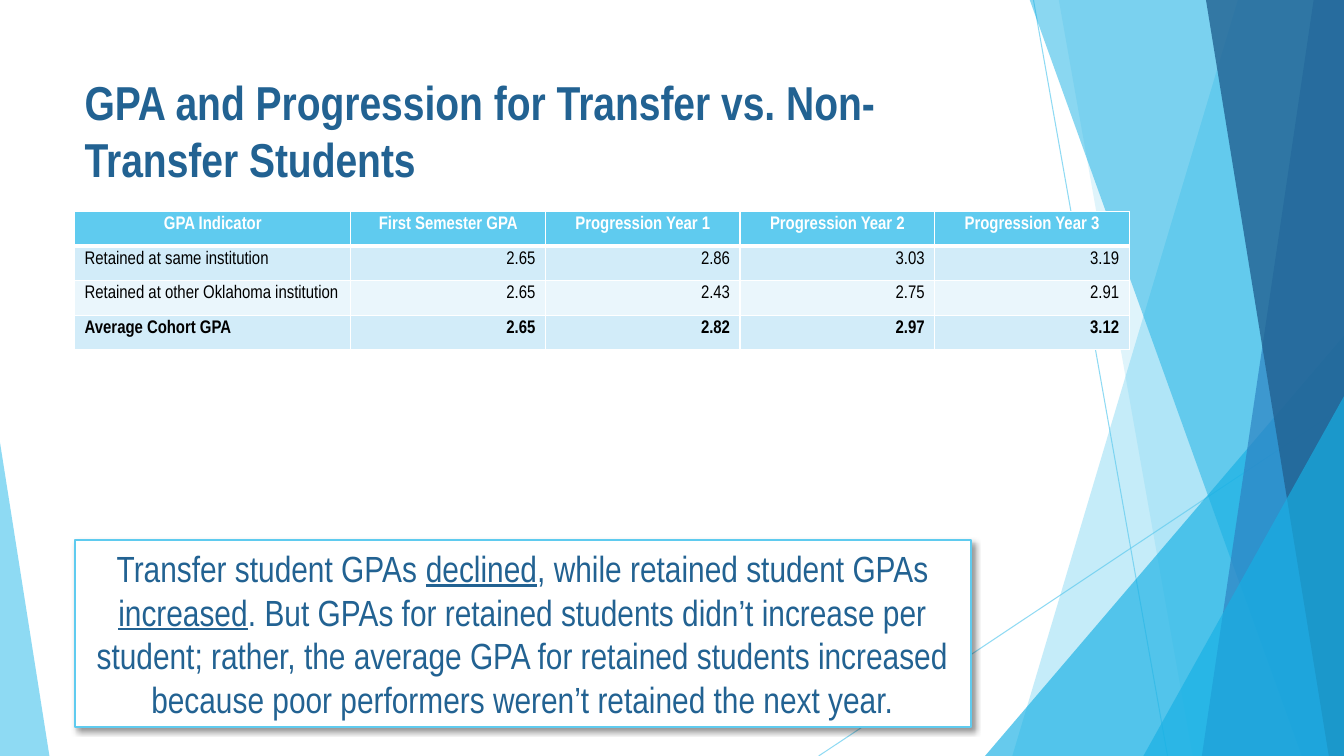
from lxml.etree import SubElement
from pptx import Presentation
from pptx.dml.color import RGBColor
from pptx.enum.shapes import MSO_CONNECTOR, MSO_SHAPE
from pptx.enum.text import MSO_ANCHOR, PP_ALIGN
from pptx.oxml.ns import qn
from pptx.util import Inches, Pt

FONT = "Arial Narrow"
WHITE, BLACK = "FFFFFF", "000000"
SKY, CYAN, BLUE, NAVY = "5FCBEF", "17B0E4", "2E83C3", "226292"
BAND_DARK, BAND_LIGHT = "D2ECF9", "EAF6FC"

WIDTH, HEIGHT, FACET_TOP = 13.33, 7.5, -0.01

TITLE = "GPA and Progression for Transfer vs. Non-Transfer Students"

GPA_ROWS = [
    ("GPA Indicator", "First Semester GPA", "Progression Year 1",
     "Progression Year 2", "Progression Year 3"),
    ("Retained at same institution", "2.65", "2.86", "3.03", "3.19"),
    ("Retained at other Oklahoma institution", "2.65", "2.43", "2.75", "2.91"),
    ("Average Cohort GPA", "2.65", "2.82", "2.97", "3.12"),
]
COLUMN_WIDTHS = [2.74] + [1.93] * 4
TABLE_HEIGHT = 1.37

# (text, underlined)
FINDING = [
    ("Transfer student GPAs ", False),
    ("declined", True),
    (", while retained student GPAs ", False),
    ("increased", True),
    (". But GPAs for retained students didn’t increase per student; rather, "
     "the average GPA for retained students increased because poor performers "
     "weren’t retained the next year.", False),
]

# (start x, start y, end x, end y)
RAYS = [(10.25, 0, 11.58, HEIGHT), (WIDTH, 4.03, 8.12, HEIGHT)]

# Bands reach the right edge: ("band", top x, bottom x, colour, opacity)
# Triangles stand on the bottom edge: ("triangle", left, top, width, apex, colour, opacity)
FACETS = [
    ("band", 12.28, 10.04, SKY, 36),
    ("band", 10.5, 11.83, SKY, 20),
    ("triangle", 9.77, 3.33, 3.56, 1, CYAN, 66),
    ("band", 10.21, 12.91, CYAN, 50),
    ("band", 13.03, 11.92, BLUE, 70),
    ("band", 11.96, 13.18, NAVY, 80),
    ("triangle", 11.34, 3.93, 1.99, 1, CYAN, 66),
    ("triangle", 0, 4.39, 0.49, 0, SKY, 70),
]


def paint(color_format, color, opacity=100):
    color_format.rgb = RGBColor.from_string(color)
    if opacity < 100:
        srgb = color_format._xFill.find(qn("a:srgbClr"))
        SubElement(srgb, qn("a:alpha"), val=str(opacity * 1000))


def fill_shape(shape, color, opacity=100):
    shape.fill.solid()
    paint(shape.fill.fore_color, color, opacity)


def style_run(run, size, color, bold=False, underline=False):
    run.font.name = FONT
    run.font.size = Pt(size)
    run.font.bold = bold
    run.font.underline = underline
    paint(run.font.color, color)


def add_ray(slide, x1, y1, x2, y2):
    ray = slide.shapes.add_connector(
        MSO_CONNECTOR.STRAIGHT, Inches(x1), Inches(y1), Inches(x2), Inches(y2))
    ray.line.width = Pt(0.75)
    ray.line.fill.solid()
    paint(ray.line.fill.fore_color, SKY, 70)
    SubElement(ray._element.spPr, qn("a:effectLst"))


def add_band(slide, top_x, bottom_x):
    corners = [(WIDTH, FACET_TOP), (WIDTH, HEIGHT), (bottom_x, HEIGHT)]
    outline = slide.shapes.build_freeform(Inches(top_x), Inches(FACET_TOP))
    outline.add_line_segments([(Inches(x), Inches(y)) for x, y in corners])
    return outline.convert_to_shape()


def add_triangle(slide, left, top, width, apex):
    triangle = slide.shapes.add_shape(
        MSO_SHAPE.ISOSCELES_TRIANGLE, Inches(left), Inches(top),
        Inches(width), Inches(HEIGHT - top))
    triangle.adjustments[0] = apex
    return triangle


def add_background(slide):
    for ray in RAYS:
        add_ray(slide, *ray)
    builders = {"band": add_band, "triangle": add_triangle}
    for kind, *geometry, color, opacity in FACETS:
        facet = builders[kind](slide, *geometry)
        facet.shadow.inherit = False
        facet.line.fill.background()
        fill_shape(facet, color, opacity)


def add_title(slide):
    title = slide.shapes.add_textbox(
        Inches(0.74), Inches(0.67), Inches(9.4), Inches(1.44))
    title.text_frame.word_wrap = True
    title.text_frame.text = TITLE
    style_run(title.text_frame.paragraphs[0].runs[0], 34, NAVY, bold=True)


def add_finding(slide):
    box = slide.shapes.add_shape(
        MSO_SHAPE.RECTANGLE, Inches(0.74), Inches(5.36), Inches(8.89), Inches(1.85))
    fill_shape(box, WHITE)
    box.line.width = Pt(1.5)
    paint(box.line.color, SKY)
    box.shadow.inherit = False
    shadow = SubElement(
        box._element.spPr.find(qn("a:effectLst")), qn("a:outerShdw"),
        blurRad=str(Pt(4)), dist=str(Pt(3)), dir=str(45 * 60000),
        algn="tl", rotWithShape="0")
    shade = SubElement(shadow, qn("a:srgbClr"), val=BLACK)
    SubElement(shade, qn("a:alpha"), val="40000")

    box.text_frame.word_wrap = True
    box.text_frame.vertical_anchor = MSO_ANCHOR.MIDDLE
    paragraph = box.text_frame.paragraphs[0]
    paragraph.alignment = PP_ALIGN.CENTER
    for text, underlined in FINDING:
        run = paragraph.add_run()
        run.text = text
        style_run(run, 26, NAVY, underline=underlined)


def add_borders(cell, top, bottom):
    properties = cell._tc.get_or_add_tcPr()
    for side, points in (("L", 1), ("R", 1), ("T", top), ("B", bottom)):
        border = SubElement(properties, qn(f"a:ln{side}"), w=str(Pt(points)))
        solid = SubElement(border, qn("a:solidFill"))
        SubElement(solid, qn("a:srgbClr"), val=WHITE)


def add_gpa_table(slide):
    table = slide.shapes.add_table(
        len(GPA_ROWS), len(COLUMN_WIDTHS), Inches(0.74), Inches(2.1),
        Inches(sum(COLUMN_WIDTHS)), Inches(TABLE_HEIGHT)).table
    for column, width in zip(table.columns, COLUMN_WIDTHS):
        column.width = Inches(width)
    last = len(GPA_ROWS) - 1
    for r, values in enumerate(GPA_ROWS):
        table.rows[r].height = Inches(TABLE_HEIGHT / len(GPA_ROWS))
        header = r == 0
        background = SKY if header else BAND_DARK if r % 2 else BAND_LIGHT
        for c, value in enumerate(values):
            cell = table.cell(r, c)
            cell.margin_top = cell.margin_bottom = Inches(0.05)
            add_borders(cell, top=3 if r == 1 else 1, bottom=3 if header else 1)
            fill_shape(cell, background)
            cell.text_frame.text = value
            paragraph = cell.text_frame.paragraphs[0]
            paragraph.alignment = (PP_ALIGN.CENTER if header
                                   else PP_ALIGN.RIGHT if c else PP_ALIGN.LEFT)
            style_run(paragraph.runs[0], 13, WHITE if header else BLACK,
                      bold=r in (0, last))


def main():
    presentation = Presentation()
    presentation.slide_width = Inches(WIDTH)
    presentation.slide_height = Inches(HEIGHT)
    slide = presentation.slides.add_slide(presentation.slide_layouts[6])
    add_background(slide)
    add_title(slide)
    add_finding(slide)
    add_gpa_table(slide)
    presentation.save("out.pptx")


if __name__ == "__main__":
    main()
